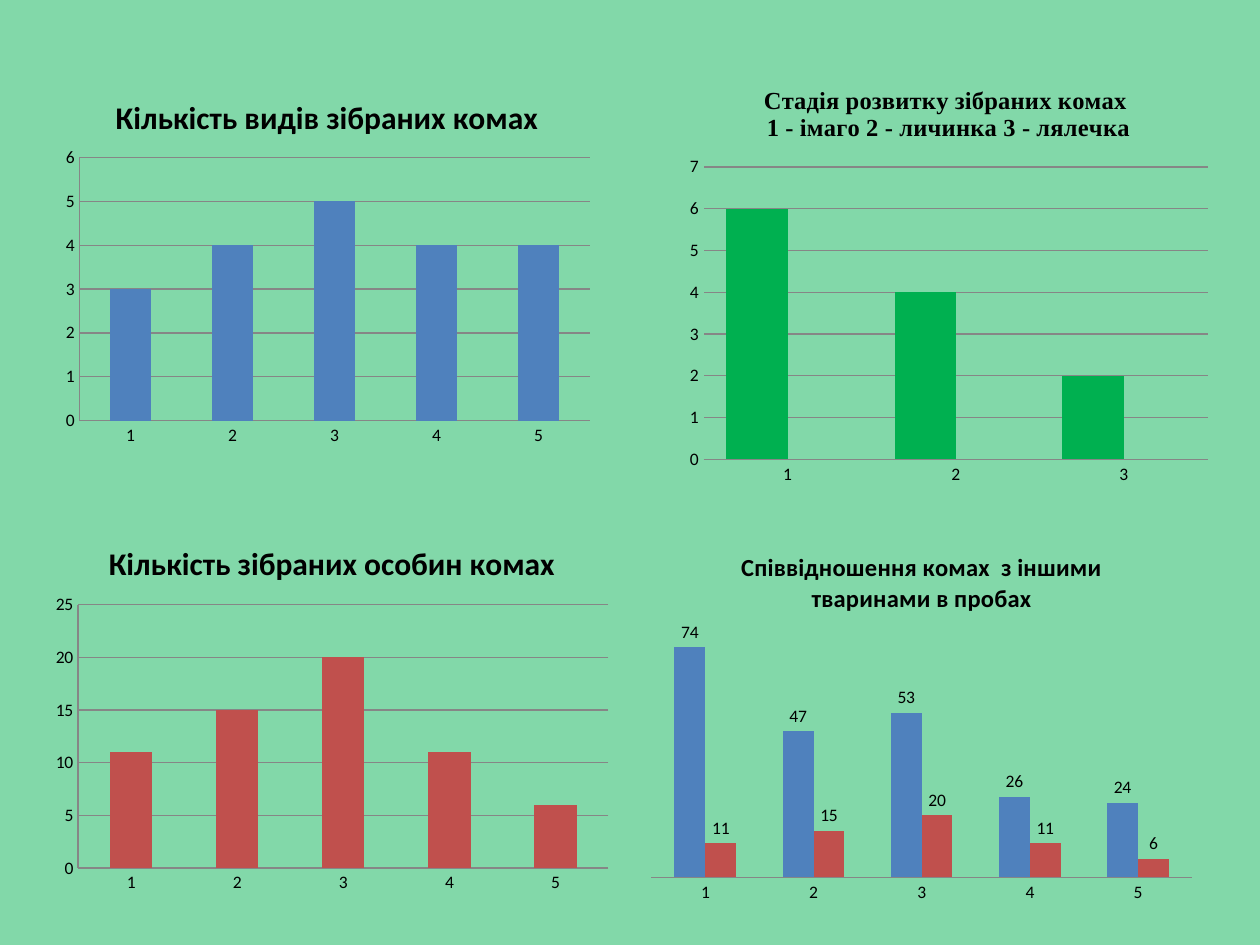
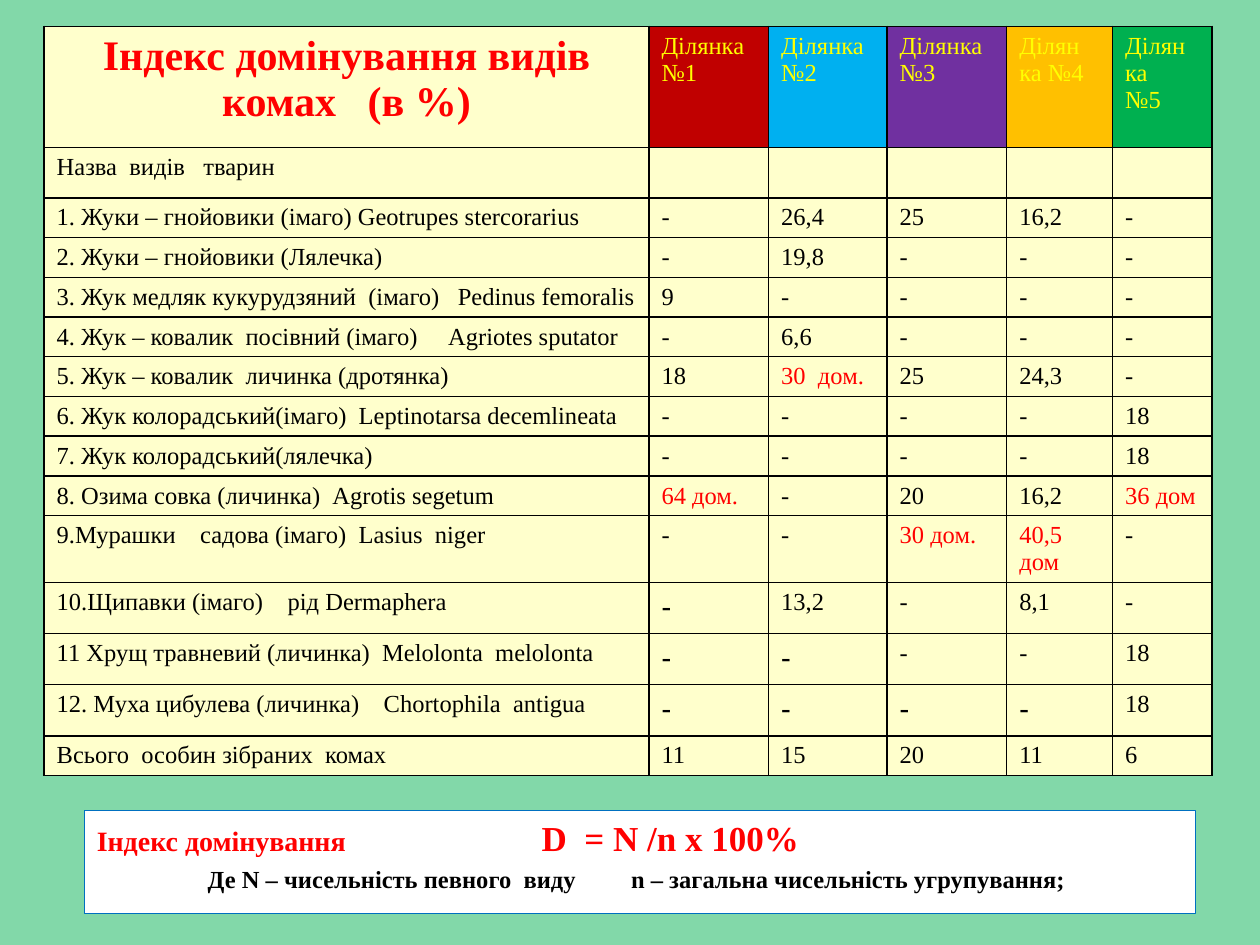
"""Build two slides on collected insects: four column charts and a dominance table."""
import dataclasses
import typing

import lxml.etree
import pptx
import pptx.chart.data
import pptx.dml.color
import pptx.enum.chart
import pptx.enum.shapes
import pptx.enum.text
import pptx.oxml.ns
import pptx.util
from pptx.util import Inches


@dataclasses.dataclass(frozen=True)
class Theme:
    background: str = "82D8A9"
    black: str = "000000"
    white: str = "FFFFFF"
    red: str = "FF0000"
    yellow: str = "FFFF00"
    cream: str = "FFFFCC"
    grid: str = "868686"
    blue_bar: str = "4F81BD"
    red_bar: str = "C0504D"
    pink_bar: str = "D99694"
    green_bar: str = "00B050"
    box_line: str = "0070C0"
    plots: tuple[str, ...] = ("C00000", "00B0F0", "7030A0", "FFC000", "00B050")
    sans: str = "Calibri"
    serif: str = "Times New Roman"
    axis_size: float = 10
    body_size: float = 14
    index_size: float = 16
    large_size: float = 18
    formula_size: float = 20
    heading_size: float = 24


THEME = Theme()


class Bars(typing.NamedTuple):
    name: str
    values: tuple[int | None, ...]
    color: str
    point_color: str | None = None


class Area(typing.NamedTuple):
    left: float
    top: float
    width: float
    height: float


@dataclasses.dataclass(frozen=True)
class ColumnChart:
    title: str
    area: Area
    bars: tuple[Bars, ...]
    maximum: int
    step: int
    title_size: float = THEME.large_size
    title_font: str = THEME.sans
    gap: int = 150
    value_line: bool = True
    labelled: bool = False
    reversed_order: bool = False
    plot_area: Area | None = None


INSECTS = (11, 15, 20, 11, 6)

CHARTS = (
    ColumnChart(
        "Стадія розвитку зібраних комах \n1 - імаго 2 - личинка 3 - лялечка",
        Area(5.39, 0.52, 4.28, 3.39),
        (Bars("Series 2", (6, 4, 2), THEME.red_bar, THEME.green_bar),
         Bars("Series 1", (None, None, None), THEME.pink_bar)),
        7, 1, THEME.body_size, THEME.serif, gap=75, value_line=False, reversed_order=True),
    ColumnChart(
        "Кількість видів зібраних комах", Area(0.43, 0.6, 4.33, 3),
        (Bars("Series 1", (3, 4, 5, 4, 4), THEME.blue_bar),), 6, 1,
        plot_area=Area(0.63, 1.25, 4.05, 2.09)),
    ColumnChart(
        "Кількість зібраних особин комах", Area(0.35, 4.14, 4.57, 3),
        (Bars("Series 1", INSECTS, THEME.red_bar),), 25, 5,
        plot_area=Area(0.62, 4.8, 4.21, 2.09)),
    ColumnChart(
        "Співвідношення комах  з іншими тваринами в пробах", Area(5.08, 4.22, 4.47, 3),
        (Bars("Series 1", (74, 47, 53, 26, 24), THEME.blue_bar),
         Bars("Series 2", INSECTS, THEME.red_bar)),
        80, 10, THEME.body_size, labelled=True),
)

COLUMN_WIDTHS = (4.8, 0.95, 0.94, 0.95, 0.84, 0.79)
ROW_HEIGHTS = (0.96, 0.4, *[0.31] * 8, 0.53, *[0.4] * 3, 0.31)
ROWS = (
    ("Індекс домінування видів комах   (в %)", "Ділянка №1", "Ділянка\n№2", "Ділянка №3",
     "Ділян\nка №4", "Ділян\nка\n№5"),
    ("Назва  видів   тварин", "", "", "", "", ""),
    ("1. Жуки – гнойовики (імаго) Geotrupes stercorarius", "-", "26,4", "25", "16,2", "-"),
    ("2. Жуки – гнойовики (Лялечка)", "-", "19,8", "-", "-", "-"),
    ("3. Жук медляк кукурудзяний  (імаго)   Pedinus femoralis", "9", "-", "-", "-", "-"),
    ("4. Жук – ковалик  посівний (імаго)     Agriotes sputator", "-", "6,6", "-", "-", "-"),
    ("5. Жук – ковалик  личинка (дротянка)", "18", "30  дом.", "25", "24,3", "-"),
    ("6. Жук колорадський(імаго)  Leptinotarsa decemlineata", "-", "-", "-", "-", "18"),
    ("7. Жук колорадський(лялечка)", "-", "-", "-", "-", "18"),
    ("8. Озима совка (личинка)  Agrotis segetum", "64 дом.", "-", "20", "16,2", "36 дом"),
    ("9.Мурашки    садова (імаго)  Lasius  niger", "-", "-", "30 дом.", "40,5 дом", "-"),
    ("10.Щипавки (імаго)    рід Dermaphera", "-", "13,2", "-", "8,1", "-"),
    ("11 Хрущ травневий (личинка)  Melolonta  melolonta", "-", "-", "-", "-", "18"),
    ("12. Муха цибулева (личинка)    Chortophila  antigua", "-", "-", "-", "-", "18"),
    ("Всього  особин зібраних  комах", *map(str, INSECTS)),
)
LARGE_DASHES = {(11, 1), (12, 1), (12, 2), (13, 1), (13, 2), (13, 3), (13, 4)}


def rgb(color: str) -> pptx.dml.color.RGBColor:
    return pptx.dml.color.RGBColor.from_string(color)


def set_font(font, size: float, color: str = THEME.black, name: str = THEME.serif,
             bold: bool = False) -> None:
    font.size = pptx.util.Pt(size)
    font.name = name
    font.bold = bold
    font.color.rgb = rgb(color)


def set_fill(item, color: str) -> None:
    item.fill.solid()
    item.fill.fore_color.rgb = rgb(color)


def set_line(line, color: str) -> None:
    line.color.rgb = rgb(color)
    line.width = pptx.util.Pt(0.75)


def add_element(parent, tag: str, **attributes: str):
    return lxml.etree.SubElement(parent, pptx.oxml.ns.qn(tag), attributes)


def add_page(deck):
    page = deck.slides.add_slide(deck.slide_layouts[6])
    set_fill(page.background, THEME.background)
    return page


def style_axes(chart, column_chart: ColumnChart) -> None:
    tick_mark = pptx.enum.chart.XL_TICK_MARK.NONE
    for axis in (chart.category_axis, chart.value_axis):
        axis.major_tick_mark = tick_mark
        axis.minor_tick_mark = tick_mark
        set_line(axis.format.line, THEME.grid)
    value_axis = chart.value_axis
    value_axis.minimum_scale = 0
    value_axis.maximum_scale = column_chart.maximum
    value_axis.major_unit = column_chart.step
    value_axis.visible = not column_chart.labelled
    value_axis.has_major_gridlines = not column_chart.labelled
    if value_axis.has_major_gridlines:
        set_line(value_axis.major_gridlines.format.line, THEME.grid)
    if not column_chart.value_line:
        value_axis.format.line.fill.background()


def place_plot(chart, area: Area, plot: Area) -> None:
    plot_area = chart._chartSpace.chart.plotArea
    for old_layout in plot_area.findall(pptx.oxml.ns.qn("c:layout")):
        plot_area.remove(old_layout)
    layout = add_element(plot_area, "c:layout")
    plot_area.insert(0, layout)
    manual = add_element(layout, "c:manualLayout")
    add_element(manual, "c:layoutTarget", val="inner")
    for tag in ("c:xMode", "c:yMode"):
        add_element(manual, tag, val="edge")
    shares = (("c:x", (plot.left - area.left) / area.width),
              ("c:y", (plot.top - area.top) / area.height),
              ("c:w", plot.width / area.width),
              ("c:h", plot.height / area.height))
    for tag, share in shares:
        add_element(manual, tag, val=f"{share:.4f}")


def style_bars(plot, column_chart: ColumnChart) -> None:
    plot.gap_width = column_chart.gap
    plot.overlap = 0
    plot.vary_by_categories = False
    all_series = list(plot.series)
    for series, bars in zip(all_series, column_chart.bars):
        set_fill(series.format, bars.color)
        series.invert_if_negative = False
        if bars.point_color:
            for index in range(len(bars.values)):
                set_fill(series.points[index].format, bars.point_color)
    if column_chart.reversed_order:
        for order, series in enumerate(reversed(all_series)):
            series._element.find(pptx.oxml.ns.qn("c:order")).set("val", str(order))
    if column_chart.labelled:
        plot.has_data_labels = True
        labels = plot.data_labels
        labels.show_value = True
        labels.position = pptx.enum.chart.XL_LABEL_POSITION.OUTSIDE_END
        set_font(labels.font, THEME.axis_size, name=THEME.sans)


def add_column_chart(page, column_chart: ColumnChart) -> None:
    data = pptx.chart.data.CategoryChartData()
    data.categories = [str(number + 1) for number in range(len(column_chart.bars[0].values))]
    for bars in column_chart.bars:
        data.add_series(bars.name, bars.values)
    chart = page.shapes.add_chart(
        pptx.enum.chart.XL_CHART_TYPE.COLUMN_CLUSTERED,
        *map(Inches, column_chart.area), data).chart
    set_font(chart.font, THEME.axis_size, name=THEME.sans)
    chart.has_legend = False
    chart.has_title = True
    chart.chart_title.include_in_layout = False
    title_frame = chart.chart_title.text_frame
    title_frame.text = column_chart.title
    for para in title_frame.paragraphs:
        set_font(para.font, column_chart.title_size, name=column_chart.title_font, bold=True)
    style_axes(chart, column_chart)
    style_bars(chart.plots[0], column_chart)
    if column_chart.plot_area:
        place_plot(chart, column_chart.area, column_chart.plot_area)


def set_borders(cell) -> None:
    properties = cell._tc.get_or_add_tcPr()
    for position, side in enumerate(("a:lnL", "a:lnR", "a:lnT", "a:lnB")):
        border = add_element(properties, side, w=str(pptx.util.Pt(1)))
        add_element(add_element(border, "a:solidFill"), "a:srgbClr", val=THEME.black)
        properties.insert(position, border)


def format_cell(cell, row: int, column: int, text: str) -> None:
    header = row == 0 and column > 0
    set_fill(cell, THEME.plots[column - 1] if header else THEME.cream)
    set_borders(cell)
    cell.text = text
    for para in cell.text_frame.paragraphs:
        if header:
            set_font(para.font, THEME.body_size, THEME.yellow)
        elif row == 0:
            para.alignment = pptx.enum.text.PP_ALIGN.CENTER
            set_font(para.font, THEME.heading_size, THEME.red, bold=True)
        elif (row, column) in LARGE_DASHES:
            set_font(para.font, THEME.large_size, name=THEME.sans)
        else:
            set_font(para.font, THEME.body_size, THEME.red if "дом" in text else THEME.black)


def add_dominance_table(page) -> None:
    table = page.shapes.add_table(
        len(ROWS), len(COLUMN_WIDTHS), Inches(0.35), Inches(0.21),
        Inches(sum(COLUMN_WIDTHS)), Inches(sum(ROW_HEIGHTS))).table
    table.first_row = False
    table.horz_banding = False
    for column, width in zip(table.columns, COLUMN_WIDTHS):
        column.width = Inches(width)
    for row, (texts, height) in enumerate(zip(ROWS, ROW_HEIGHTS)):
        table.rows[row].height = Inches(height)
        for column, text in enumerate(texts):
            format_cell(table.cell(row, column), row, column, text)


def set_tabs(para, *stops: float) -> None:
    tab_list = add_element(para._p.get_or_add_pPr(), "a:tabLst")
    for stop in stops:
        add_element(tab_list, "a:tab", pos=str(Inches(stop)), algn="l")


def add_formula_box(page) -> None:
    box = page.shapes.add_shape(
        pptx.enum.shapes.MSO_SHAPE.RECTANGLE, *map(Inches, (0.67, 6.43, 8.82, 0.82)))
    box.shadow.inherit = False
    set_fill(box, THEME.white)
    set_line(box.line, THEME.box_line)
    frame = box.text_frame
    frame.word_wrap = True
    frame.vertical_anchor = pptx.enum.text.MSO_ANCHOR.TOP
    formula, legend = frame.paragraphs[0], frame.add_paragraph()
    for para in (formula, legend):
        para.alignment = pptx.enum.text.PP_ALIGN.LEFT
        para.space_before = pptx.util.Pt(3)
    for text, size in (("Індекс домінування\t", THEME.index_size),
                       ("D  = N /n х 100%", THEME.formula_size)):
        span = formula.add_run()
        span.text = text
        set_font(span.font, size, THEME.red, bold=True)
    legend.text = "\tДе N – чисельність певного  виду\tn – загальна чисельність угрупування;"
    set_font(legend.font, THEME.body_size, bold=True)
    set_tabs(formula, 3.53)
    set_tabs(legend, 0.88, 4.24)


def main() -> None:
    deck = pptx.Presentation()
    deck.slide_width, deck.slide_height = Inches(10), Inches(7.5)
    chart_page = add_page(deck)
    for column_chart in CHARTS:
        add_column_chart(chart_page, column_chart)
    table_page = add_page(deck)
    add_dominance_table(table_page)
    add_formula_box(table_page)
    deck.save("out.pptx")


if __name__ == "__main__":
    main()
